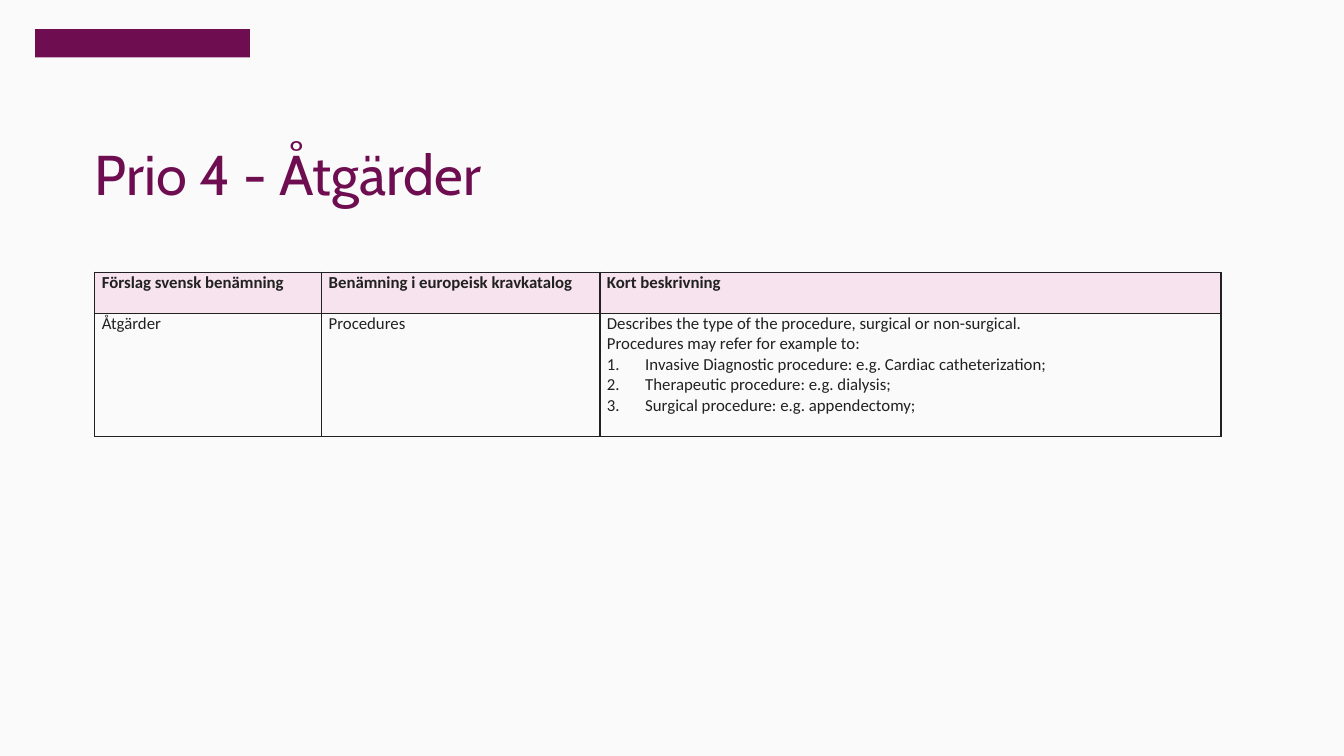
from lxml.etree import SubElement as Sub
from pptx import Presentation
from pptx.dml.color import RGBColor
from pptx.enum.shapes import MSO_SHAPE as Shape
from pptx.enum.text import MSO_ANCHOR as Anchor
from pptx.oxml import parse_xml
from pptx.oxml.ns import nsdecls, qn
from pptx.util import Inches, Pt

PLUM = RGBColor(0x6E, 0x0E, 0x50)
PINK = RGBColor(0xF7, 0xE3, 0xED)
INK = RGBColor(0x21, 0x21, 0x21)
PAPER = RGBColor(0xFA, 0xFA, 0xFA)

WIDTHS = (2.25, 2.76, 6.16)
HEIGHTS = (0.41, 1.22)
HEADS = ("Förslag svensk benämning", "Benämning i europeisk kravkatalog", "Kort beskrivning")
INTRO = (
    "Describes the type of the procedure, surgical or non-surgical.",
    "Procedures may refer for example to:",
)
KINDS = (
    "Invasive Diagnostic procedure: e.g. Cardiac catheterization;",
    "Therapeutic procedure: e.g. dialysis;",
    "Surgical procedure: e.g. appendectomy;",
)


def write(frame, lines, size=12, font="Calibri", color=INK, bold=False, space=None, items=()):
    """Fill a text frame with plain lines followed by numbered items."""
    for i, text in enumerate((*lines, *items)):
        para = frame.paragraphs[0] if i == 0 else frame.add_paragraph()
        if space:
            para.line_spacing = space
        run = para.add_run()
        run.text = text
        run.font.size, run.font.name, run.font.bold = Pt(size), font, bold
        run.font.color.rgb = color
        if i >= len(lines):
            number(para)


def number(para):
    """Give a paragraph an automatic number and a hanging indent."""
    props = para._p.get_or_add_pPr()
    props.set("marL", str(Inches(0.38)))
    props.set("indent", str(-Inches(0.38)))
    Sub(props, qn("a:buFont"), typeface="+mj-lt")
    Sub(props, qn("a:buAutoNum"), type="arabicPeriod")
    tabs = Sub(props, qn("a:tabLst"))
    Sub(tabs, qn("a:tab"), pos=str(Inches(0.5)), algn="l")


def border(cell):
    """Draw a thin line on each side of a cell."""
    props = cell._tc.get_or_add_tcPr()
    for i, side in enumerate("LRTB"):
        props.insert(i, parse_xml(
            f'<a:ln{side} {nsdecls("a")} w="{Pt(1)}"><a:solidFill>'
            f'<a:srgbClr val="{INK}"/></a:solidFill></a:ln{side}>'))


def add_badge(slide):
    """Place a plain block in the top left corner."""
    badge = slide.shapes.add_shape(
        Shape.RECTANGLE, Inches(0.35), Inches(0.29), Inches(2.13), Inches(0.28))
    badge.shadow.inherit = False
    badge.fill.solid()
    badge.fill.fore_color.rgb = PLUM
    badge.line.fill.background()


def add_title(slide, text):
    """Add the slide heading."""
    frame = slide.shapes.add_textbox(
        Inches(0.94), Inches(1.45), Inches(11.46), Inches(0.61)).text_frame
    frame.word_wrap = True
    frame.vertical_anchor = Anchor.BOTTOM
    frame.margin_left = frame.margin_right = frame.margin_top = frame.margin_bottom = 0
    write(frame, [text], size=40, font="Cabin", color=PLUM, space=0.9)


def add_grid(slide):
    """Add the table of terms and return it."""
    grid = slide.shapes.add_table(
        len(HEIGHTS), len(WIDTHS), Inches(0.94), Inches(2.7),
        Inches(sum(WIDTHS)), Inches(sum(HEIGHTS))).table
    grid.horz_banding = False
    for col, width in zip(grid.columns, WIDTHS):
        col.width = Inches(width)
    for row, height in zip(grid.rows, HEIGHTS):
        row.height = Inches(height)
    for cell in grid.iter_cells():
        cell.margin_left = cell.margin_right = Inches(0.07)
        cell.margin_top = cell.margin_bottom = 0
        cell.fill.background()
        border(cell)
    return grid


def main():
    """Build and save the slide."""
    deck = Presentation()
    deck.slide_width, deck.slide_height = Inches(13.33), Inches(7.5)
    slide = deck.slides.add_slide(deck.slide_layouts[6])
    slide.background.fill.solid()
    slide.background.fill.fore_color.rgb = PAPER
    add_badge(slide)
    add_title(slide, "Prio 4 - Åtgärder")
    grid = add_grid(slide)
    for i, head in enumerate(HEADS):
        cell = grid.cell(0, i)
        cell.fill.solid()
        cell.fill.fore_color.rgb = PINK
        write(cell.text_frame, [head], bold=True)
    for i, term in enumerate(("Åtgärder", "Procedures")):
        write(grid.cell(1, i).text_frame, [term])
    write(grid.cell(1, 2).text_frame, INTRO, items=KINDS)
    deck.save("out.pptx")


if __name__ == "__main__":
    main()
